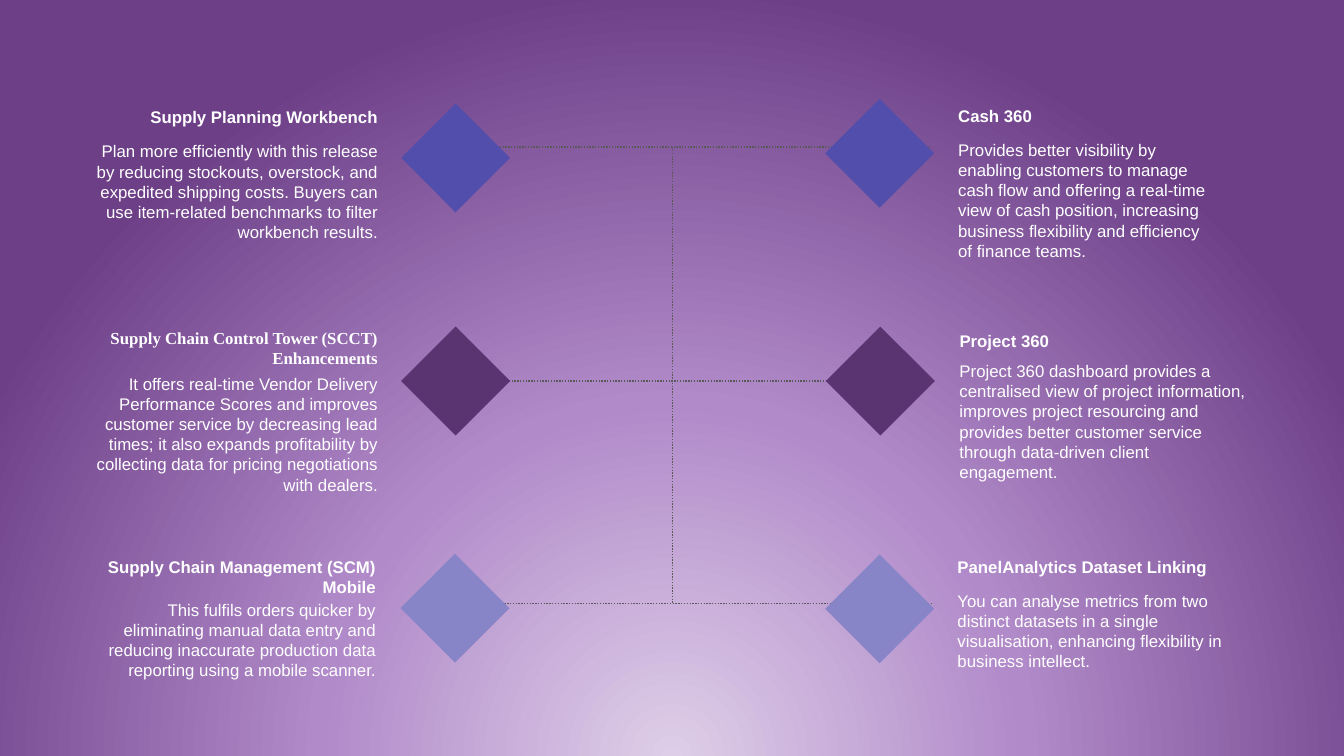
from lxml import etree
from pptx import Presentation
from pptx.dml.color import RGBColor
from pptx.enum.dml import MSO_LINE
from pptx.enum.shapes import MSO_CONNECTOR, MSO_SHAPE
from pptx.enum.text import MSO_AUTO_SIZE, PP_ALIGN
from pptx.oxml import parse_xml
from pptx.oxml.ns import nsdecls, qn
from pptx.util import Inches, Pt

DIAMOND = MSO_SHAPE.DIAMOND
STRAIGHT = MSO_CONNECTOR.STRAIGHT
DOTS = MSO_LINE.ROUND_DOT
GROW = MSO_AUTO_SIZE.SHAPE_TO_FIT_TEXT
LEFT, RIGHT = PP_ALIGN.LEFT, PP_ALIGN.RIGHT

WHITE = RGBColor(0xFF, 0xFF, 0xFF)
GREY = RGBColor(0x59, 0x59, 0x59)
BLUE = RGBColor(0x52, 0x4E, 0xAB)
PLUM = RGBColor(0x5A, 0x34, 0x71)
LILAC = RGBColor(0x87, 0x84, 0xC7)

SANS, SERIF = "Arial", "Times New Roman"
STOPS = [(0, "DECEE8"), (46, "B18AC9"), (100, "6C3F87")]
SIZE = 1.62
LINE_H, PAD = 0.305, 0.1

LINES = [
    (6.56, 2.19, 13.86, 2.19),
    (6.57, 5.67, 13.87, 5.67),
    (6.63, 8.98, 13.87, 8.98),
    (10.01, 2.19, 10.01, 8.98),
]

# side, colour, diamond (x, y), text edge, head, body
# head and body: (top, width, lines, font, text)
ITEMS = [
    (RIGHT, BLUE, (5.97, 1.54), 5.72,
     (1.54, 4.97, 1, SANS, "Supply Planning Workbench"),
     (2.05, 4.44, 5, SANS,
      "Plan more efficiently with this release by reducing stockouts, "
      "overstock, and expedited shipping costs. Buyers can use item-related "
      "benchmarks to filter workbench results.")),
    (RIGHT, PLUM, (5.97, 4.86), 5.72,
     (4.83, 5.12, 2, SERIF, "Supply Chain Control Tower (SCCT) Enhancements"),
     (5.51, 4.44, 6, SANS,
      "It offers real-time Vendor Delivery Performance Scores and improves "
      "customer service by decreasing lead times; it also expands "
      "profitability by collecting data for pricing negotiations with "
      "dealers.")),
    (RIGHT, LILAC, (5.96, 8.24), 5.69,
     (8.23, 4.62, 2, SANS, "Supply Chain Management (SCM) Mobile"),
     (8.87, 4.41, 4, SANS,
      "This fulfils orders quicker by eliminating manual data entry and "
      "reducing inaccurate production data reporting using a mobile "
      "scanner.")),
    (LEFT, BLUE, (12.28, 1.47), 14.16,
     (1.52, 3.22, 1, SANS, "Cash 360"),
     (2.03, 3.97, 6, SANS,
      "Provides better visibility by enabling customers to manage cash flow "
      "and offering a real-time view of cash position, increasing business "
      "flexibility and efficiency of finance teams.")),
    (LEFT, PLUM, (12.29, 4.86), 14.18,
     (4.87, 3.22, 1, SANS, "Project 360"),
     (5.32, 4.54, 6, SANS,
      "Project 360 dashboard provides a centralised view of project "
      "information, improves project resourcing and provides better customer "
      "service through data-driven client engagement.")),
    (LEFT, LILAC, (12.28, 8.25), 14.15,
     (8.24, 4.77, 1, SANS, "PanelAnalytics Dataset Linking"),
     (8.74, 4.27, 4, SANS,
      "You can analyse metrics from two distinct datasets in a single "
      "visualisation, enhancing flexibility in business intellect.")),
]


def paint_back(slide):
    stops = "".join(
        f'<a:gs pos="{pos * 1000}"><a:srgbClr val="{rgb}"/></a:gs>'
        for pos, rgb in STOPS)
    back = parse_xml(
        f'<p:bg {nsdecls("p", "a")}><p:bgPr><a:gradFill rotWithShape="1">'
        f'<a:gsLst>{stops}</a:gsLst><a:path path="circle">'
        '<a:fillToRect l="50000" t="130000" r="50000" b="-30000"/></a:path>'
        '</a:gradFill><a:effectLst/></p:bgPr></p:bg>')
    slide.element.cSld.insert(0, back)


def add_line(slide, ends):
    line = slide.shapes.add_connector(STRAIGHT, *map(Inches, ends))
    line.line.color.rgb = GREY
    line.line.width = Pt(1.5)
    line.line.dash_style = DOTS
    etree.SubElement(line.element.spPr, qn("a:effectLst"))


def add_gem(slide, spot, color):
    x, y = spot
    gem = slide.shapes.add_shape(
        DIAMOND, Inches(x), Inches(y), Inches(SIZE), Inches(SIZE))
    gem.shadow.inherit = False
    gem.fill.solid()
    gem.fill.fore_color.rgb = color
    gem.line.fill.background()


def add_text(slide, side, edge, part, bold):
    top, width, rows, font, text = part
    left = edge - width if side == RIGHT else edge
    box = slide.shapes.add_textbox(
        Inches(left), Inches(top), Inches(width), Inches(rows * LINE_H + PAD))
    frame = box.text_frame
    frame.word_wrap = True
    frame.auto_size = GROW
    para = frame.paragraphs[0]
    para.alignment = side
    run = para.add_run()
    run.text = text
    run.font.name = font
    run.font.size = Pt(18)
    run.font.bold = bold
    run.font.color.rgb = WHITE


def main():
    deck = Presentation()
    deck.slide_width, deck.slide_height = Inches(20), Inches(11.25)
    slide = deck.slides.add_slide(deck.slide_layouts[6])
    paint_back(slide)
    for ends in LINES:
        add_line(slide, ends)
    for side, color, spot, edge, head, body in ITEMS:
        add_gem(slide, spot, color)
        add_text(slide, side, edge, head, True)
        add_text(slide, side, edge, body, False)
    deck.save("out.pptx")


if __name__ == "__main__":
    main()
